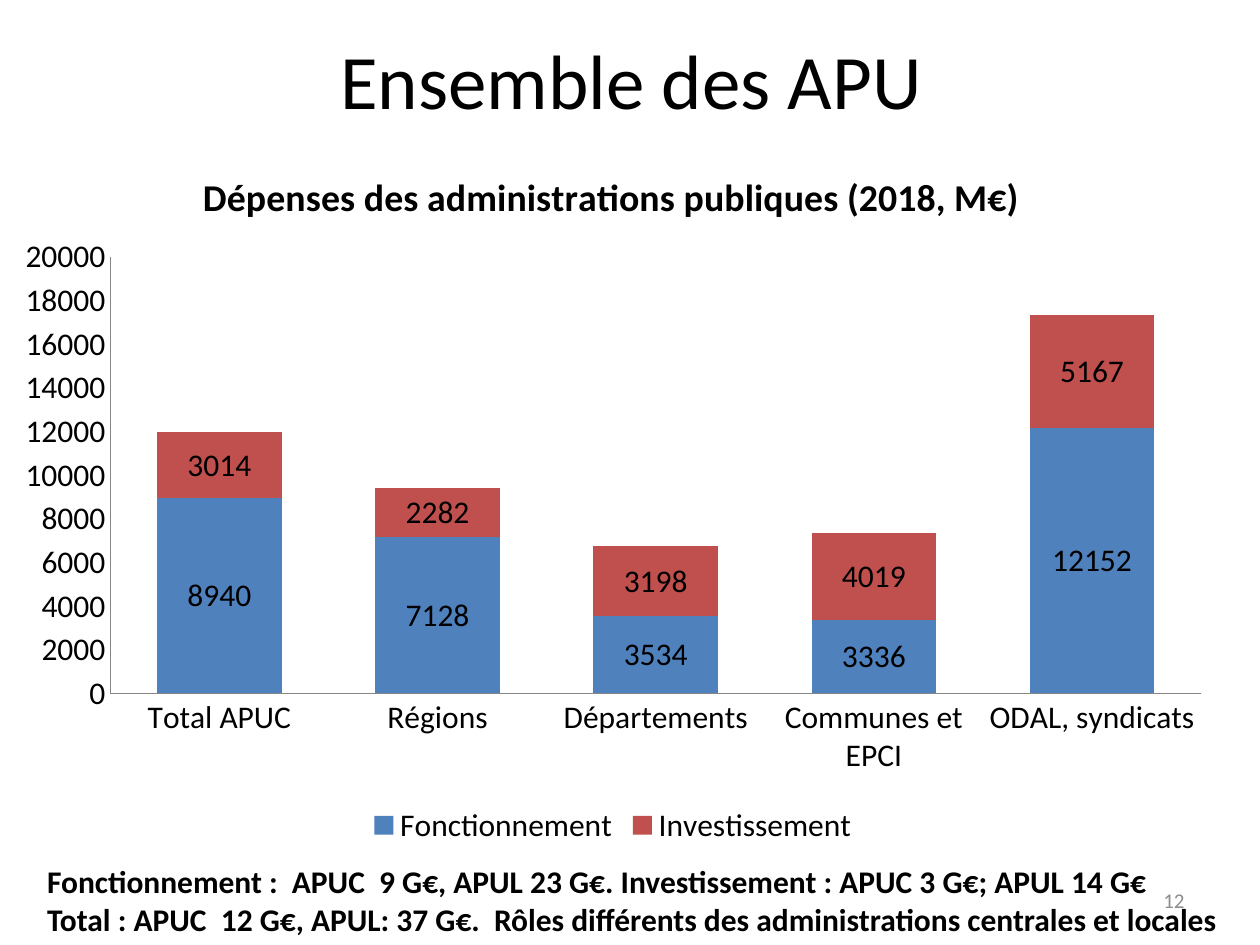
from pptx import Presentation
from pptx.chart.data import CategoryChartData
from pptx.dml.color import RGBColor
from pptx.enum.chart import XL_CHART_TYPE as Kind, XL_LEGEND_POSITION as Pos
from pptx.enum.chart import XL_TICK_MARK as Tick
from pptx.enum.text import MSO_ANCHOR as Anchor, PP_ALIGN as Align
from pptx.oxml import parse_xml
from pptx.oxml.ns import nsdecls, qn
from pptx.util import Cm, Pt

TITLE = "Ensemble des APU"
HEAD = "Dépenses des administrations publiques (2018, M€)"
CATS = ["Total APUC", "Régions", "Départements", "Communes et EPCI",
        "ODAL, syndicats"]
SERIES = [
    ("Fonctionnement", "4F81BD", [8940, 7128, 3534, 3336, 12152]),
    ("Investissement", "C0504D", [3014, 2282, 3198, 4019, 5167]),
]
NOTES = [
    "Fonctionnement :  APUC  9 G€, APUL 23 G€. "
    "Investissement : APUC 3 G€; APUL 14 G€",
    "Total : APUC  12 G€, APUL: 37 G€.  "
    "Rôles différents des administrations centrales et locales",
]
PAGE = "12"


def rgb(code):
    return RGBColor.from_string(code)


def style(font, size, color="000000", bold=False):
    font.name, font.size, font.bold = "Calibri", Pt(size), bold
    font.color.rgb = rgb(color)


def write(shape, lines, size, color="000000", bold=False, align=Align.LEFT):
    frame = shape.text_frame
    frame.text = "\n".join(lines)
    for par in frame.paragraphs:
        par.alignment = align
        style(par.font, size, color, bold)
    return frame


def place(node, index, **parts):
    """Give a chart part a manual layout, as fractions of the chart."""
    old = node.find(qn("c:layout"))
    if old is not None:
        node.remove(old)
    modes = [("xMode", "edge"), ("yMode", "edge")]
    if "w" in parts:
        modes.insert(0, ("layoutTarget", "inner"))
    tags = "".join(f'<c:{key} val="{val}"/>'
                   for key, val in modes + list(parts.items()))
    node.insert(index, parse_xml(
        f'<c:layout {nsdecls("c")}><c:manualLayout>{tags}'
        '</c:manualLayout></c:layout>'))


def add_bars(slide):
    data = CategoryChartData(number_format="General")
    data.categories = CATS
    for name, _, vals in SERIES:
        data.add_series(name, vals)
    chart = slide.shapes.add_chart(
        Kind.COLUMN_STACKED, Cm(0), Cm(2.72), Cm(24.71), Cm(14.43), data).chart
    style(chart.font, 18)

    chart.has_title = True
    head = chart.chart_title
    head.text_frame.text = HEAD
    style(head.text_frame.paragraphs[0].font, 21.6, bold=True)
    head.include_in_layout = True
    root = chart.element
    place(root.find(".//" + qn("c:title")), 1, x=0.16, y=0.04)
    place(root.find(".//" + qn("c:plotArea")), 0, x=0.09, y=0.17, w=0.89, h=0.61)

    chart.has_legend = True
    chart.legend.position = Pos.BOTTOM
    chart.legend.include_in_layout = False

    for axis in (chart.category_axis, chart.value_axis):
        axis.major_tick_mark = axis.minor_tick_mark = Tick.NONE
        axis.has_major_gridlines = False
        axis.format.line.color.rgb = rgb("868686")
    chart.value_axis.minimum_scale = 0
    chart.value_axis.maximum_scale = 20000
    chart.value_axis.major_unit = 2000

    plot = chart.plots[0]
    plot.gap_width, plot.overlap = 75, 100
    plot.vary_by_categories = False
    for series, (_, color, _) in zip(plot.series, SERIES):
        series.format.fill.solid()
        series.format.fill.fore_color.rgb = rgb(color)
        series.data_labels.show_value = True


def main():
    deck = Presentation()
    deck.slide_width, deck.slide_height = Cm(25.4), Cm(19.05)
    slide = deck.slides.add_slide(deck.slide_layouts[5])

    title = slide.shapes.title
    title.left, title.top = Cm(1.3), Cm(0)
    title.width, title.height = Cm(22.86), Cm(3.18)
    write(title, [TITLE], 44, align=Align.CENTER).vertical_anchor = Anchor.MIDDLE

    add_bars(slide)

    notes = slide.shapes.add_textbox(Cm(0.7), Cm(17.25), Cm(24.16), Cm(1.8))
    write(notes, NOTES, 18, bold=True).word_wrap = False

    page = slide.shapes.add_textbox(Cm(18.2), Cm(17.65), Cm(5.93), Cm(1.01))
    frame = write(page, [PAGE], 12, "8C8C8C", align=Align.RIGHT)
    frame.word_wrap = True
    frame.vertical_anchor = Anchor.MIDDLE

    deck.save("out.pptx")


if __name__ == "__main__":
    main()
